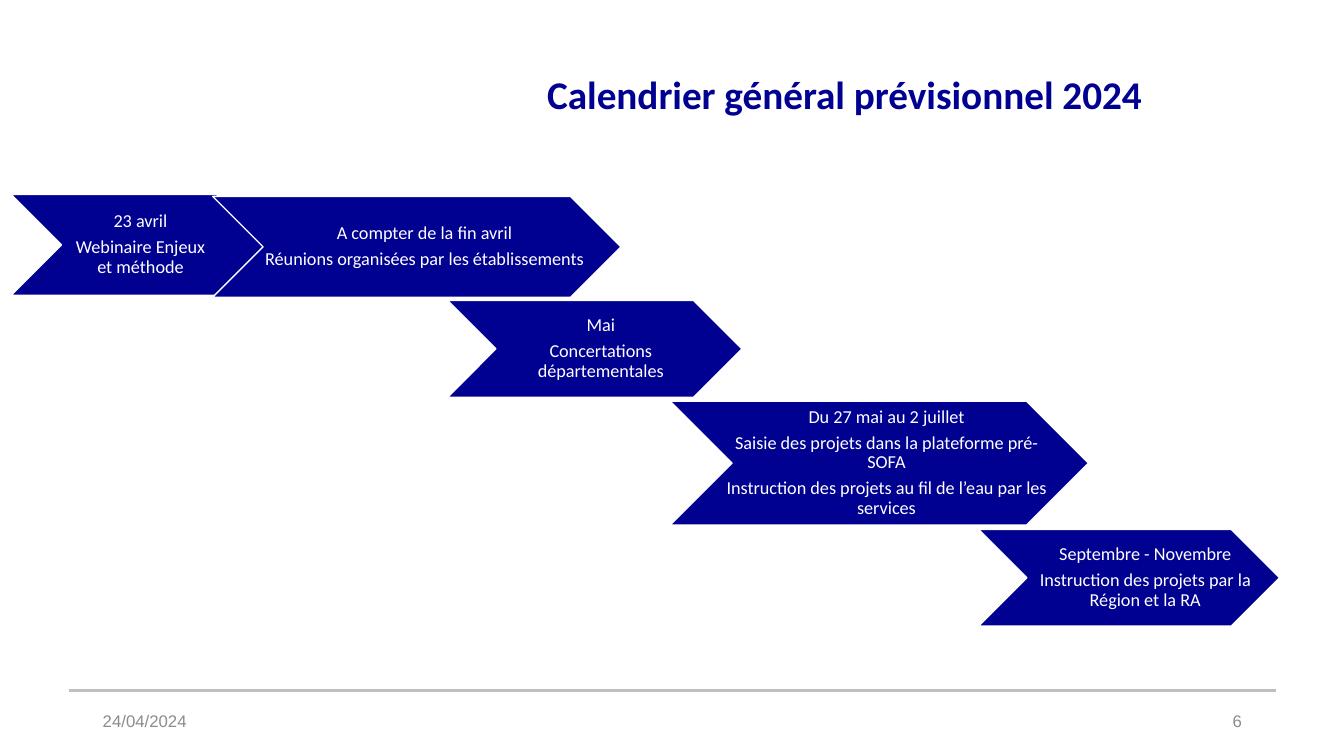
"""Build the 2024 provisional calendar slide with its staircase of chevrons."""
from lxml import etree
from pptx import Presentation
from pptx import util as u
from pptx.dml.color import RGBColor
from pptx.enum import shapes, text
from pptx.oxml.ns import qn

TITLE = "Calendrier général prévisionnel 2024"
DATE = "24/04/2024"
PAGE = "6"

# Lengths in centimetres: box is left, top, width, height; label is left, width.
STEPS = [
    {"box": (0.28, 4.9, 6.45, 2.54), "label": (1.65, 3.71),
     "lines": ["23 avril", "Webinaire Enjeux et méthode"]},
    {"box": (5.36, 4.95, 10.29, 2.54), "label": (6.56, 8.2),
     "lines": ["A compter de la fin avril",
               "Réunions organisées par les établissements"]},
    {"box": (11.28, 7.57, 7.42, 2.44), "label": (12.17, 5.87),
     "lines": ["Mai", "Concertations départementales"]},
    {"box": (16.89, 10.11, 10.54, 3.12), "label": (18.14, 8.33),
     "lines": ["Du 27 mai au 2 juillet",
               "Saisie des projets dans la plateforme pré-SOFA",
               "Instruction des projets au fil de l’eau par les services"]},
    {"box": (24.66, 13.34, 7.59, 2.44), "label": (25.98, 5.69),
     "lines": ["Septembre - Novembre",
               "Instruction des projets par la Région et la RA"]},
]

THEME = {
    "navy": RGBColor(0x00, 0x00, 0x91),
    "white": RGBColor(0xFF, 0xFF, 0xFF),
    "rule": RGBColor(0xBF, 0xBF, 0xBF),
    "grey": RGBColor(0x8C, 0x8C, 0x8C),
    "title": 28, "step": 13, "footer": 12,
    "body_font": "Calibri", "footer_font": "Arial",
}
STEP_INSETS = (0.1, 0.03, 0.03, 0.03)
FOOTER_TOP, FOOTER_WIDTH, FOOTER_HEIGHT = 17.65, 7.62, 1.02


def add_text(slide, box, lines, *, size, color, font=THEME["body_font"], bold=False,
             align=text.PP_ALIGN.LEFT, spacing=1.0, after=0,
             insets=(0.25, 0.13, 0.25, 0.13)):
    """Add a wrapped, vertically centred text box with one paragraph per line."""
    frame = slide.shapes.add_textbox(*map(u.Cm, box)).text_frame
    frame.word_wrap = True
    frame.vertical_anchor = text.MSO_ANCHOR.MIDDLE
    (frame.margin_left, frame.margin_top,
     frame.margin_right, frame.margin_bottom) = map(u.Cm, insets)
    for index, line in enumerate(lines):
        paragraph = frame.add_paragraph() if index else frame.paragraphs[0]
        paragraph.alignment = align
        paragraph.line_spacing = spacing
        paragraph.space_after = u.Pt(after)
        run = paragraph.add_run()
        run.text = line
        run.font.size = u.Pt(size)
        run.font.name = font
        run.font.bold = bold
        run.font.color.rgb = color


def add_step(slide, step):
    """Add one chevron and its centred label."""
    chevron = slide.shapes.add_shape(shapes.MSO_SHAPE.CHEVRON, *map(u.Cm, step["box"]))
    chevron.shadow.inherit = False
    chevron.fill.solid()
    chevron.fill.fore_color.rgb = THEME["navy"]
    chevron.line.color.rgb = THEME["white"]
    chevron.line.width = u.Pt(1)
    _, top, _, height = step["box"]
    left, width = step["label"]
    add_text(slide, (left, top, width, height), step["lines"], size=THEME["step"],
             color=THEME["white"], align=text.PP_ALIGN.CENTER, spacing=0.9,
             after=4.5, insets=STEP_INSETS)


def add_footer(slide):
    """Add the grey rule, the date and the page number."""
    rule = slide.shapes.add_connector(shapes.MSO_CONNECTOR.STRAIGHT,
                                      *map(u.Cm, (1.73, 17.4, 32.16, 17.4)))
    rule.line.color.rgb = THEME["rule"]
    rule.line.width = u.Pt(2.25)
    etree.SubElement(rule._element.spPr, qn("a:effectLst"))
    for left, line, align in [(2.34, DATE, text.PP_ALIGN.LEFT),
                              (23.93, PAGE, text.PP_ALIGN.RIGHT)]:
        add_text(slide, (left, FOOTER_TOP, FOOTER_WIDTH, FOOTER_HEIGHT), [line],
                 size=THEME["footer"], color=THEME["grey"],
                 font=THEME["footer_font"], align=align)


def main():
    """Compose and save the slide."""
    presentation = Presentation()
    presentation.slide_width = u.Cm(33.87)
    presentation.slide_height = u.Cm(19.05)
    slide = presentation.slides.add_slide(presentation.slide_layouts[6])
    add_footer(slide)
    add_text(slide, (13.54, 1.24, 18.72, 2.41), [TITLE], size=THEME["title"],
             color=THEME["navy"], bold=True, spacing=0.9)
    for step in STEPS:
        add_step(slide, step)
    presentation.save("out.pptx")


if __name__ == "__main__":
    main()
